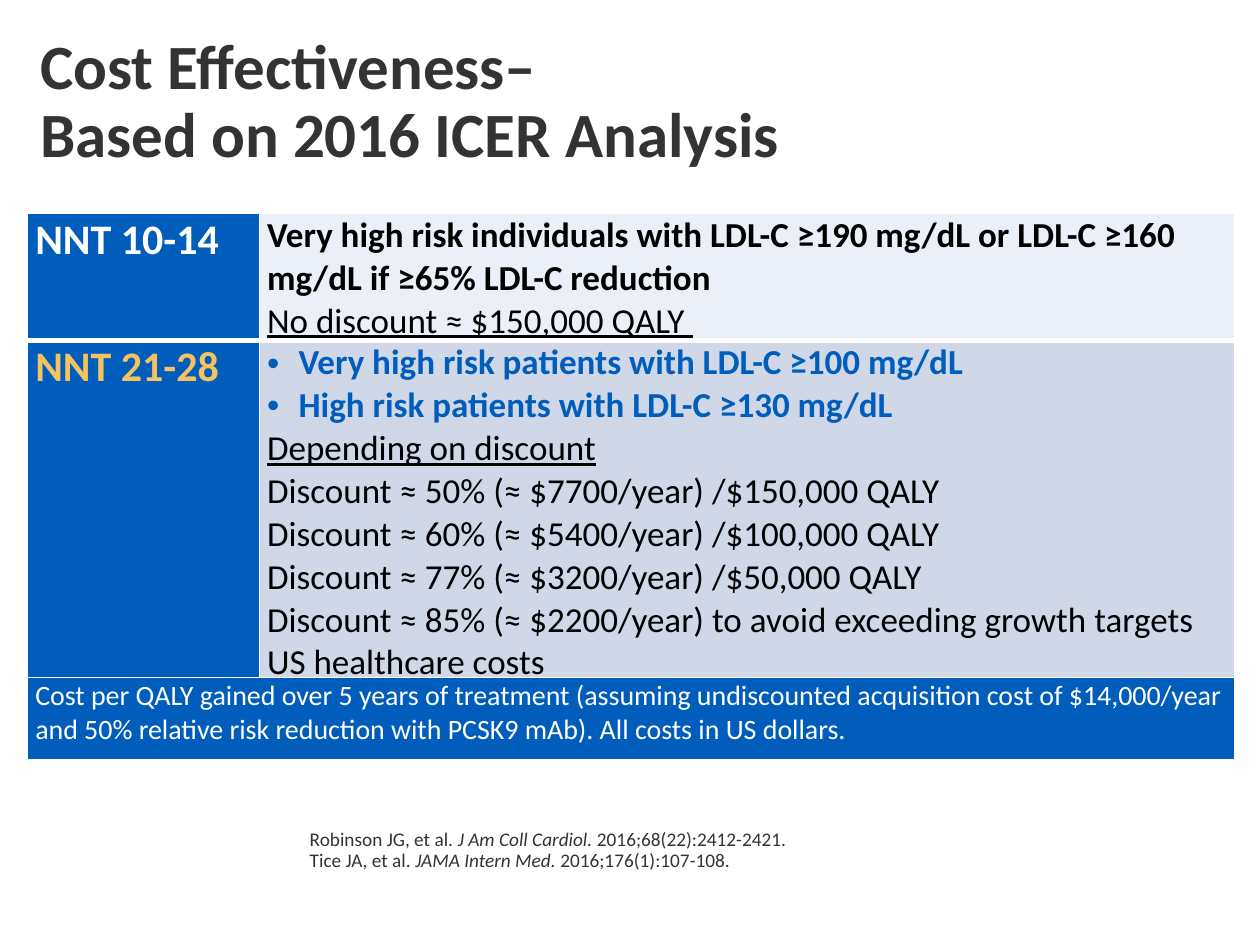
import pptx
import pptx.dml.color
import pptx.enum.text
import pptx.oxml
import pptx.oxml.ns
import pptx.util

Inches = pptx.util.Inches
ANCHOR = pptx.enum.text.MSO_ANCHOR

BLUE, GOLD, WHITE, BLACK, GREY = "005DBC", "F4C261", "FFFFFF", "000000", "333333"
PALE, MID = "EBEFF7", "D0D8E8"


def color(hex_value):
    return pptx.dml.color.RGBColor.from_string(hex_value)


def xml(tag, attributes="", inner=""):
    namespace = pptx.oxml.ns.nsdecls("a")
    return pptx.oxml.parse_xml(f"<a:{tag} {namespace} {attributes}>{inner}</a:{tag}>")


def write(paragraph, text, size=20, hex_value=BLACK, bold=False, italic=False,
          underline=False, bullet=False, spacing=None):
    """Add text to a paragraph; a newline becomes a line break."""
    if bullet:
        properties = paragraph._p.get_or_add_pPr()
        indent = Inches(0.25)
        properties.set("marL", str(indent))
        properties.set("indent", str(-indent))
        properties.append(xml("buFont", 'typeface="Arial"'))
        properties.append(xml("buChar", 'char="•"'))
    if spacing:
        paragraph.line_spacing = spacing
    for index, line in enumerate(text.split("\n")):
        if index:
            paragraph.add_line_break()
        run = paragraph.add_run()
        run.text = line
        run.font.name = "Calibri"
        run.font.size = pptx.util.Pt(size)
        run.font.color.rgb = color(hex_value)
        run.font.bold, run.font.italic, run.font.underline = bold, italic, underline


def next_paragraph(frame, index):
    return frame.add_paragraph() if index else frame.paragraphs[0]


def add_frame(slide, box, anchor=ANCHOR.TOP):
    frame = slide.shapes.add_textbox(*map(Inches, box)).text_frame
    frame.word_wrap = True
    frame.vertical_anchor = anchor
    return frame


def add_title(slide, box):
    frame = add_frame(slide, box, ANCHOR.MIDDLE)
    write(frame.paragraphs[0], "Cost Effectiveness–\nBased on 2016 ICER Analysis",
          size=36, hex_value=GREY, bold=True, spacing=0.9)


def add_references(slide, box):
    references = [
        ("Robinson JG, et al. ", "J Am Coll Cardiol.", " 2016;68(22):2412-2421."),
        ("Tice JA, et al. ", "JAMA Intern Med.", " 2016;176(1):107-108."),
    ]
    frame = add_frame(slide, box)
    for index, parts in enumerate(references):
        paragraph = next_paragraph(frame, index)
        for part, italic in zip(parts, (False, True, False)):
            write(paragraph, part, size=11, hex_value=GREY, italic=italic, spacing=0.9)


def fill_cell(cell, fill, lines, anchor=ANCHOR.TOP, top=1, bottom=1):
    """Format one cell; top and bottom are border widths in points."""
    cell.margin_left = cell.margin_right = Inches(0.06)
    cell.margin_top, cell.margin_bottom = Inches(0.01), 0
    cell.vertical_anchor = anchor
    line_fill = f'<a:solidFill><a:srgbClr val="{WHITE}"/></a:solidFill>'
    for side, width in (("L", 1), ("R", 1), ("T", top), ("B", bottom)):
        cell._tc.get_or_add_tcPr().append(
            xml(f"ln{side}", f'w="{pptx.util.Pt(width)}"', line_fill))
    cell.fill.solid()
    cell.fill.fore_color.rgb = color(fill)
    for index, (text, style) in enumerate(lines):
        write(next_paragraph(cell.text_frame, index), text, **style)


def add_cost_table(slide, box):
    table = slide.shapes.add_table(3, 2, *map(Inches, box)).table
    for column, width in zip(table.columns, (1.84, 7.74)):
        column.width = Inches(width)
    for row, height in zip(table.rows, (0.8, 2.64, 0.65)):
        row.height = Inches(height)

    label = dict(size=24, bold=True)
    underlined = dict(underline=True)
    group = dict(hex_value=BLUE, bold=True, bullet=True)
    low_nnt = [
        ("Very high risk individuals with LDL-C ≥190 mg/dL or LDL-C ≥160 mg/dL "
         "if ≥65% LDL-C reduction", dict(bold=True)),
        ("No discount ≈ $150,000 QALY ", underlined),
    ]
    discounts = [
        ("50%", "$7700", "/$150,000 QALY"),
        ("60%", "$5400", "/$100,000 QALY"),
        ("77%", "$3200", "/$50,000 QALY"),
        ("85%", "$2200", "to avoid exceeding growth targets US healthcare costs"),
    ]
    high_nnt = [
        ("Very high risk patients with LDL-C ≥100 mg/dL", group),
        ("High risk patients with LDL-C ≥130 mg/dL", group),
        ("Depending on discount", underlined),
    ] + [(f"Discount ≈ {share} (≈ {price}/year) {outcome}", {})
         for share, price, outcome in discounts]
    footnote = ("Cost per QALY gained over 5 years of treatment (assuming undiscounted "
                "acquisition cost of $14,000/year and 50% relative risk reduction with "
                "PCSK9 mAb). All costs in US dollars.")

    # The first row is set off by a thicker rule
    fill_cell(table.cell(0, 0), BLUE, [("NNT 10-14", dict(label, hex_value=WHITE))], bottom=3)
    fill_cell(table.cell(0, 1), PALE, low_nnt, ANCHOR.MIDDLE, bottom=3)
    fill_cell(table.cell(1, 0), BLUE, [("NNT 21-28", dict(label, hex_value=GOLD))], top=3)
    fill_cell(table.cell(1, 1), MID, high_nnt, ANCHOR.MIDDLE, top=3)

    # Footnote across both columns
    table.cell(2, 0).merge(table.cell(2, 1))
    fill_cell(table.cell(2, 0), BLUE, [(footnote, dict(size=16, hex_value=WHITE))])


def main():
    deck = pptx.Presentation()
    deck.slide_width, deck.slide_height = Inches(10), Inches(7.5)
    slide = deck.slides.add_slide(deck.slide_layouts[6])
    add_title(slide, (0.22, 0.19, 9.58, 1.25))
    add_references(slide, (2.36, 6.54, 7.44, 0.9))
    add_cost_table(slide, (0.22, 1.69, 9.58, 4.09))
    deck.save("out.pptx")


if __name__ == "__main__":
    main()
